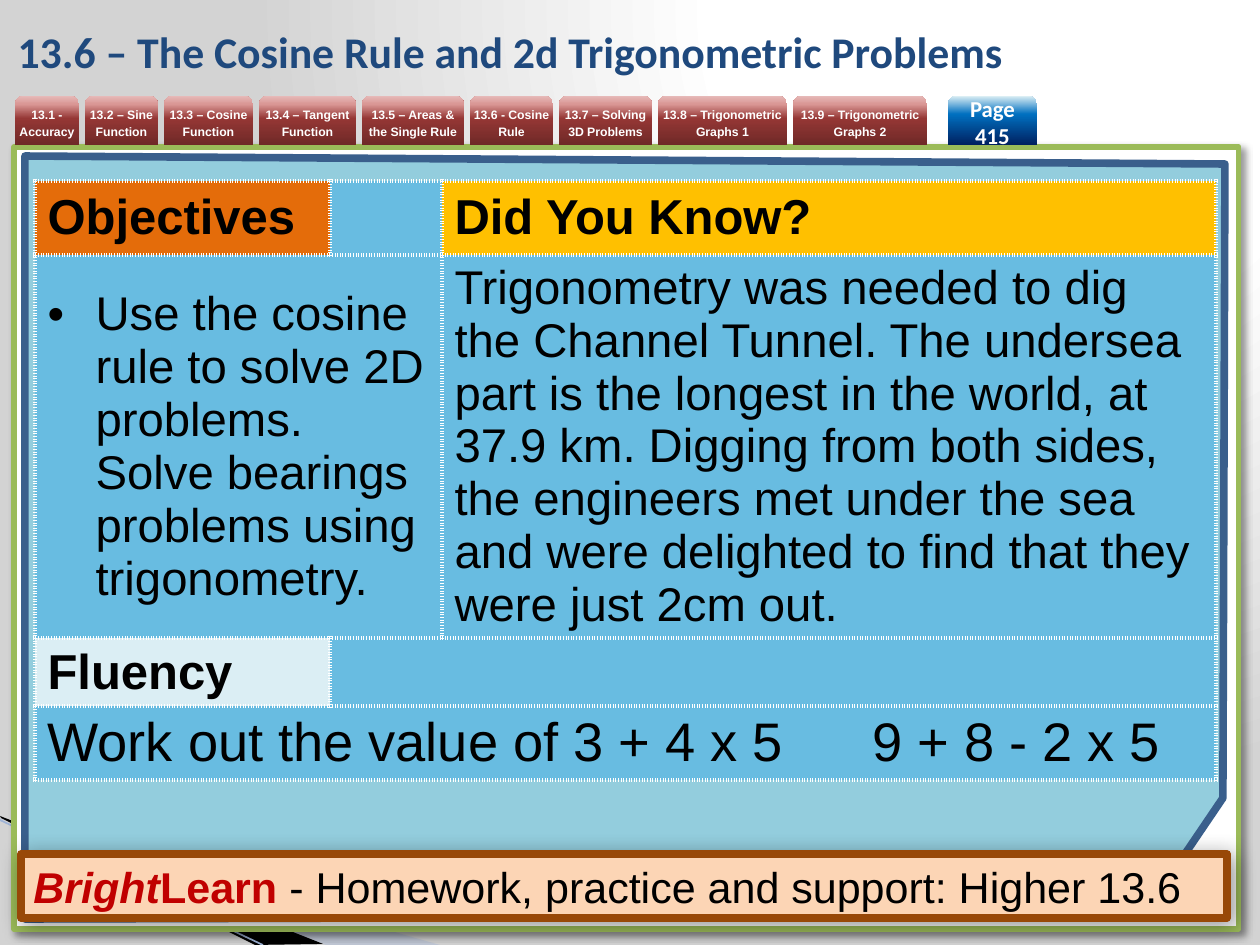
"""Build the lesson slide on the cosine rule and 2D trigonometric problems."""
from dataclasses import dataclass
from typing import Optional

from lxml import etree
from pptx import Presentation
from pptx import util as u
from pptx.dml.color import RGBColor
from pptx.enum import shapes, text
from pptx.oxml.ns import qn

EMU_PER_PX = 914400 / 126
WHITE = RGBColor(0xFF, 0xFF, 0xFF)
BLACK = RGBColor(0, 0, 0)
GREY = RGBColor(0xD3, 0xD3, 0xD3)
NAVY = RGBColor(0x1F, 0x49, 0x7D)
STEEL = RGBColor(0x3A, 0x5F, 0x8C)
TEAL = RGBColor(0x93, 0xCD, 0xDD)
SKY = RGBColor(0x68, 0xBC, 0xE1)
ICE = RGBColor(0xDB, 0xEE, 0xF4)
MIST = RGBColor(0xA7, 0xB9, 0xDB)
HAZE = RGBColor(0x9E, 0xB3, 0xD6)
GREEN = RGBColor(0x9B, 0xBB, 0x59)
ORANGE = RGBColor(0xE4, 0x6C, 0x0A)
GOLD = RGBColor(0xFF, 0xC0, 0x00)
PEACH = RGBColor(0xFC, 0xD5, 0xB5)
BROWN = RGBColor(0x98, 0x48, 0x07)
RED = RGBColor(0xC0, 0x00, 0x00)
RED_STOPS = [(0, RGBColor(0x6F, 0x29, 0x27)), (54, RGBColor(0x95, 0x37, 0x35)),
             (83, RGBColor(0xD9, 0x96, 0x94)), (100, RGBColor(0xE6, 0xB9, 0xB8))]
BLUE_STOPS = [(0, RGBColor(0, 0x20, 0x60)), (63, RGBColor(0, 0x70, 0xC0)), (100, ICE)]
PAPER_STOPS = [(0, WHITE), (40, WHITE), (100, GREY)]
TAB_TOP, TAB_HEIGHT, TAB_GAP = 96, 49, 6


@dataclass
class Tab:
    label: str
    width: int


@dataclass
class Entry:
    row: int
    col: int
    words: str
    fill: RGBColor
    size: int = 28
    bold: bool = True
    span: int = 1
    bullet: bool = False
    tab_stop: Optional[int] = None


TABS = [
    Tab("13.1 - Accuracy", 64), Tab("13.2 – Sine Function", 73),
    Tab("13.3 – Cosine Function", 89), Tab("13.4 – Tangent Function", 97),
    Tab("13.5 – Areas & the Single Rule", 102), Tab("13.6 - Cosine Rule", 83),
    Tab("13.7 – Solving 3D Problems", 93), Tab("13.8 – Trigonometric Graphs 1", 129),
    Tab("13.9 – Trigonometric Graphs 2", 134),
]
ENTRIES = [
    Entry(0, 0, "Objectives", ORANGE),
    Entry(0, 1, "", SKY),
    Entry(0, 2, "Did You Know?", GOLD),
    Entry(1, 0, "Use the cosine rule to solve 2D problems. Solve bearings problems "
          "using trigonometry.", SKY, 27, False, span=2, bullet=True),
    Entry(1, 2, "Trigonometry was needed to dig the Channel Tunnel. The undersea part is "
          "the longest in the world, at 37.9 km. Digging from both sides, the engineers met "
          "under the sea and were delighted to find that they were just 2cm out.",
          SKY, 27, False),
    Entry(2, 0, "Fluency", ICE),
    Entry(2, 1, "", SKY, span=2),
    Entry(3, 0, "Work out the value of 3 + 4 x 5\t9 + 8 - 2 x 5", SKY, 31, False,
          span=3, tab_stop=825),
]


def px(length: int) -> int:
    return round(length * EMU_PER_PX)


def add(parent, tag: str, **attributes):
    return etree.SubElement(parent, qn(tag), {k: str(v) for k, v in attributes.items()})


def set_font(font, name: str, size: float, color: RGBColor, bold: bool) -> None:
    font.name, font.size, font.bold = name, u.Pt(size), bold
    font.color.rgb = color


def set_gradient(fill, owner, stops, radial: bool = False) -> None:
    fill.gradient()
    gradient = owner.find(".//" + qn("a:gradFill"))
    for child in list(gradient):
        gradient.remove(child)
    stop_list = add(gradient, "a:gsLst")
    for position, color in stops:
        add(add(stop_list, "a:gs", pos=position * 1000), "a:srgbClr", val=color)
    if radial:
        focus = add(gradient, "a:path", path="circle")
        add(focus, "a:fillToRect", l=65000, t=0, r=0, b=98000)
    else:
        add(gradient, "a:lin", ang=16200000, scaled=0)


def set_look(shape, fill: RGBColor, line: Optional[RGBColor] = None, weight: float = 0) -> None:
    shape.shadow.inherit = False
    shape.fill.solid()
    shape.fill.fore_color.rgb = fill
    if line is None:
        shape.line.fill.background()
    else:
        shape.line.color.rgb, shape.line.width = line, u.Pt(weight)


def cast_shadow(shape, blur: int) -> None:
    effects = shape._element.spPr.find(qn("a:effectLst"))
    shadow = add(effects, "a:outerShdw", blurRad=u.Pt(blur), dist=u.Pt(3), dir=2700000,
                 algn="tl", rotWithShape=0)
    add(add(shadow, "a:srgbClr", val=BLACK), "a:alpha", val=40000)


def draw_outline(slide, points):
    builder = slide.shapes.build_freeform(*points[0], scale=EMU_PER_PX)
    builder.add_line_segments(points[1:], close=True)
    return builder.convert_to_shape()


def draw_box(slide, left: int, top: int, width: int, height: int,
             kind=shapes.MSO_SHAPE.RECTANGLE):
    return slide.shapes.add_shape(kind, px(left), px(top), px(width), px(height))


def draw_tab(slide, left: int, tab: Tab, stops, font: str, size: int, spacing=None) -> None:
    box = draw_box(slide, left, TAB_TOP, tab.width, TAB_HEIGHT,
                   shapes.MSO_SHAPE.ROUND_2_SAME_RECTANGLE)
    box.shadow.inherit = False
    box.line.fill.background()
    set_gradient(box.fill, box._element.spPr, stops)
    frame = box.text_frame
    frame.margin_left = frame.margin_right = frame.margin_top = frame.margin_bottom = 0
    frame.vertical_anchor = text.MSO_ANCHOR.MIDDLE
    label = frame.paragraphs[0]
    label.text, label.alignment, label.line_spacing = tab.label, text.PP_ALIGN.CENTER, spacing
    set_font(label.font, font, size, WHITE, True)


def draw_backdrop(slide) -> None:
    set_gradient(slide.background.fill, slide._element.cSld, PAPER_STOPS, radial=True)
    swoosh = draw_outline(slide, [(0, 819), (440, 945), (326, 945), (0, 818)])
    set_look(swoosh, MIST)
    add(swoosh._element.spPr.find(".//" + qn("a:srgbClr")), "a:alpha", val=40000)
    set_look(draw_outline(slide, [(0, 816), (323, 944), (255, 945), (1, 818)]), BLACK)
    edge = slide.shapes.add_connector(shapes.MSO_CONNECTOR.STRAIGHT,
                                      px(0), px(820), px(263), px(945))
    edge.line.color.rgb, edge.line.width = HAZE, u.Pt(0.95)
    add(edge._element.spPr, "a:effectLst")
    page = draw_box(slide, 14, 147, 1225, 782)
    set_look(page, WHITE, GREEN, 3)
    cast_shadow(page, 4)
    board = draw_outline(slide, [(25, 156), (1225, 164), (1223, 798), (1143, 916), (25, 919)])
    set_look(board, TEAL, STEEL, 4.33)


def fill_entry(table, entry: Entry) -> None:
    cell = table.cell(entry.row, entry.col)
    if entry.span > 1:
        cell.merge(table.cell(entry.row, entry.col + entry.span - 1))
    cell.vertical_anchor = text.MSO_ANCHOR.MIDDLE
    words = cell.text_frame.paragraphs[0]
    words.text = entry.words
    properties = words._p.get_or_add_pPr()
    if entry.bullet:
        properties.set("marL", str(px(48)))
        properties.set("indent", str(px(-48)))
        add(properties, "a:buFont", typeface="Arial")
        add(properties, "a:buChar", char="•")
    if entry.tab_stop:
        add(add(properties, "a:tabLst"), "a:tab", pos=px(entry.tab_stop), algn="l")
    set_font(words.font, "Arial", entry.size, BLACK, entry.bold)


def style_cell(cell, fill: RGBColor) -> None:
    properties = cell._tc.get_or_add_tcPr()
    for side in ("a:lnL", "a:lnR", "a:lnT", "a:lnB"):
        border = add(properties, side, w=u.Pt(3))
        add(add(border, "a:solidFill"), "a:srgbClr", val=WHITE)
        add(border, "a:prstDash", val="sysDot")
    cell.fill.solid()
    cell.fill.fore_color.rgb = fill


def draw_lesson(slide) -> None:
    columns, rows = (295, 112, 774), (74, 383, 68, 74)
    table = slide.shapes.add_table(len(rows), len(columns), px(35), px(181),
                                   px(sum(columns)), px(sum(rows))).table
    for column, width in zip(table.columns, columns):
        column.width = px(width)
    for row, height in zip(table.rows, rows):
        row.height = px(height)
    for entry in ENTRIES:
        fill_entry(table, entry)
        for col in range(entry.col, entry.col + entry.span):
            style_cell(table.cell(entry.row, col), entry.fill)


def draw_footer(slide) -> None:
    banner = draw_box(slide, 21, 854, 1206, 64)
    set_look(banner, PEACH, BROWN, 4.33)
    cast_shadow(banner, 13)
    banner.text_frame.vertical_anchor = text.MSO_ANCHOR.MIDDLE
    line = banner.text_frame.paragraphs[0]
    line.alignment = text.PP_ALIGN.LEFT
    line.font.name, line.font.size = "Arial", u.Pt(24.6)
    for words, color, bold, italic in (
            ("Bright", RED, True, True), ("Learn ", RED, True, False),
            ("- Homework, practice and support: Higher 13.6", BLACK, False, False)):
        run = line.add_run()
        run.text, run.font.bold, run.font.italic = words, bold, italic
        run.font.color.rgb = color


def main() -> None:
    deck = Presentation()
    deck.slide_width, deck.slide_height = px(1260), px(945)
    slide = deck.slides.add_slide(deck.slide_layouts[5])
    draw_backdrop(slide)
    left = 15
    for tab in TABS:
        draw_tab(slide, left, tab, RED_STOPS, "Arial", 7, u.Pt(10))
        left += tab.width + TAB_GAP
    title = slide.shapes.title
    title.left, title.top, title.width, title.height = px(5), px(6), px(1042), px(89)
    title.text_frame.vertical_anchor = text.MSO_ANCHOR.MIDDLE
    heading = title.text_frame.paragraphs[0]
    heading.text = "13.6 – The Cosine Rule and 2d Trigonometric Problems"
    heading.alignment = text.PP_ALIGN.LEFT
    set_font(heading.font, "Calibri", 25, NAVY, True)
    draw_tab(slide, 948, Tab("Page 415", 89), BLUE_STOPS, "Calibri", 13)
    draw_lesson(slide)
    draw_footer(slide)
    deck.save("out.pptx")


if __name__ == "__main__":
    main()
